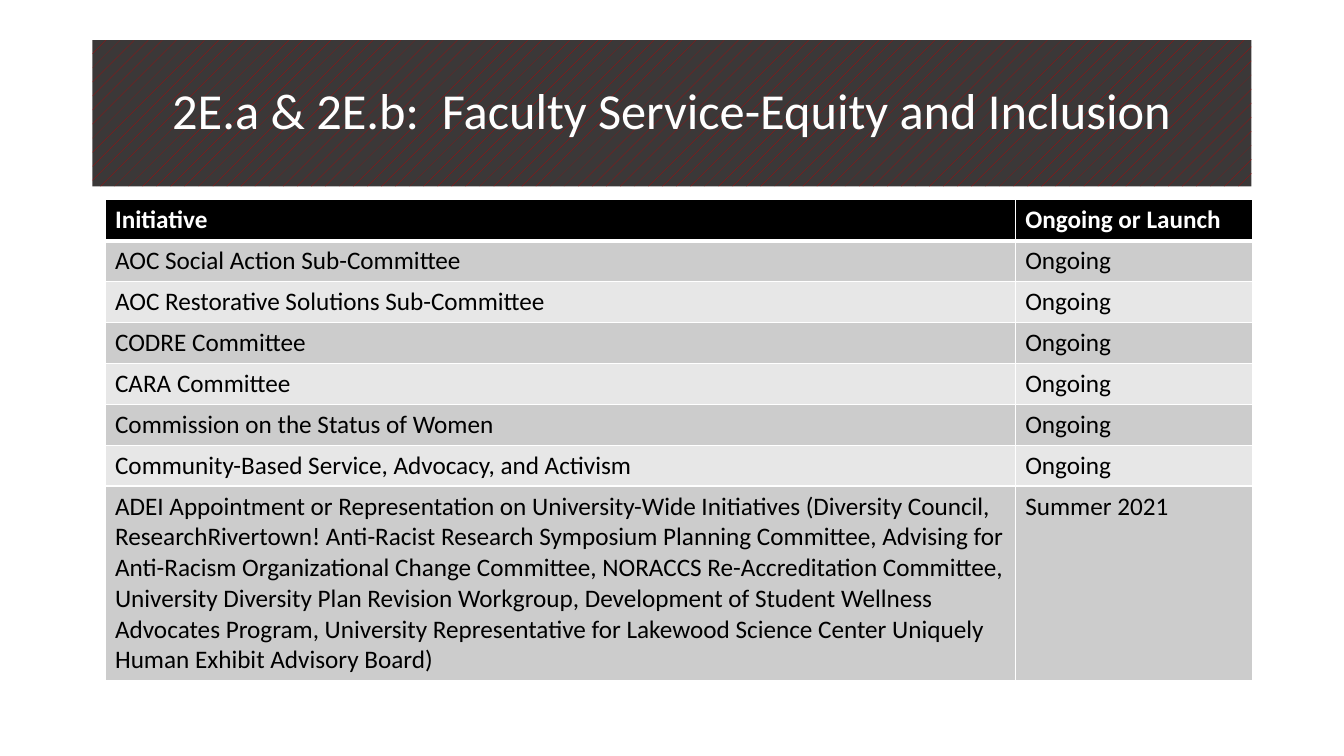
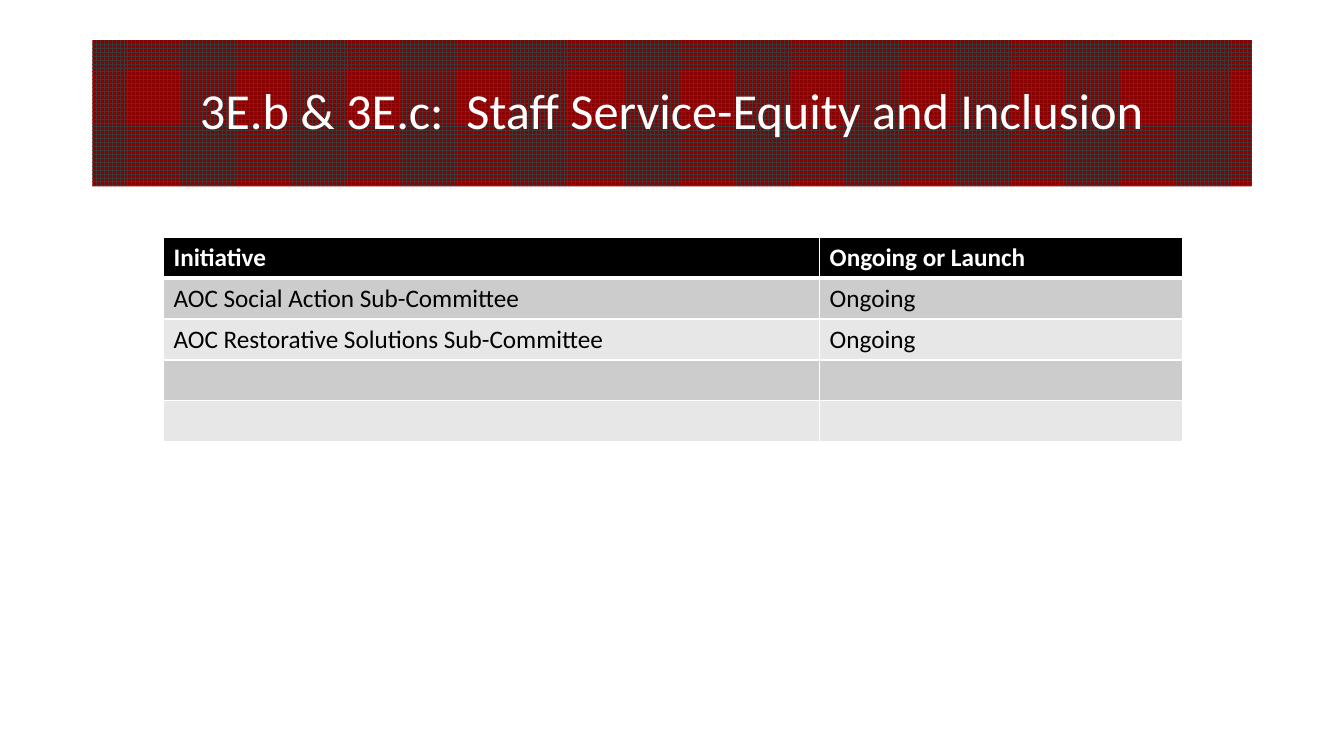
from lxml import etree
from pptx import Presentation
from pptx.dml.color import RGBColor
from pptx.enum.dml import MSO_PATTERN
from pptx.enum.shapes import MSO_SHAPE
from pptx.enum.text import MSO_ANCHOR, PP_ALIGN
from pptx.oxml.ns import qn
from pptx.util import Pt

RECT = MSO_SHAPE.RECTANGLE
DOTS = MSO_PATTERN.PERCENT_5
GRID = MSO_PATTERN.LARGE_GRID
MIDDLE = MSO_ANCHOR.MIDDLE
CENTER = PP_ALIGN.CENTER

FONT = "Calibri"
WHITE, BLACK = "FFFFFF", "000000"
RED, MAROON, SLATE = "C00000", "8A0000", "3B3838"
BANDS = ("CCCCCC", "E7E7E7")
ROW = 29.2
THIN, THICK = 1, 3
HEAD = ("Initiative", "Ongoing or Launch")
SHARED = [
    ("AOC Social Action Sub-Committee", "Ongoing"),
    ("AOC Restorative Solutions Sub-Committee", "Ongoing"),
]
FACULTY = SHARED + [
    ("CODRE Committee", "Ongoing"),
    ("CARA Committee", "Ongoing"),
    ("Commission on the Status of Women", "Ongoing"),
    ("Community-Based Service, Advocacy, and Activism", "Ongoing"),
    ("ADEI Appointment or Representation on University-Wide Initiatives "
     "(Diversity Council, ResearchRivertown! Anti-Racist Research Symposium "
     "Planning Committee, Advising for Anti-Racism Organizational Change "
     "Committee, NORACCS Re-Accreditation Committee, University Diversity "
     "Plan Revision Workgroup, Development of Student Wellness Advocates "
     "Program, University Representative for Lakewood Science Center "
     "Uniquely Human Exhibit Advisory Board)", "Summer 2021"),
]
STAFF = SHARED + [("", "")] * 2


def color(code):
    return RGBColor.from_string(code)


def add_run(para, text, size, tint, bold=False):
    run = para.add_run()
    run.text = text
    font = run.font
    font.name, font.size, font.bold = FONT, Pt(size), bold
    font.color.rgb = color(tint)


def add_title(slide, text, weave, fore, back):
    band = slide.shapes.add_shape(RECT, Pt(66), Pt(28.75), Pt(828), Pt(104.4))
    band.shadow.inherit = False
    band.line.fill.background()
    band.fill.patterned()
    band.fill.pattern = weave
    band.fill.fore_color.rgb = color(fore)
    band.fill.back_color.rgb = color(back)
    frame = band.text_frame
    frame.word_wrap = True
    frame.vertical_anchor = MIDDLE
    para = frame.paragraphs[0]
    para.alignment = CENTER
    para.line_spacing = 0.9
    add_run(para, text, 36, WHITE)


def add_edges(cell, top, bottom):
    """Draw white borders; must run before the cell gets its fill."""
    props = cell._tc.get_or_add_tcPr()
    for side, width in zip("LRTB", (THIN, THIN, top, bottom)):
        line = etree.SubElement(props, qn(f"a:ln{side}"), w=str(Pt(width)))
        fill = etree.SubElement(line, qn("a:solidFill"))
        etree.SubElement(fill, qn("a:srgbClr"), val=WHITE)


def add_grid(slide, left, top, widths, items):
    rows = [HEAD] + items
    table = slide.shapes.add_table(
        len(rows), len(widths), Pt(left), Pt(top),
        Pt(sum(widths)), Pt(ROW * len(rows))).table
    table.first_row = table.horz_banding = False
    for col, width in zip(table.columns, widths):
        col.width = Pt(width)
    for i, texts in enumerate(rows):
        head = i == 0
        table.rows[i].height = Pt(ROW)
        for j, text in enumerate(texts):
            cell = table.cell(i, j)
            add_edges(cell, THICK if i == 1 else THIN, THICK if head else THIN)
            cell.fill.solid()
            cell.fill.fore_color.rgb = color(BLACK if head else BANDS[(i - 1) % 2])
            if text:
                add_run(cell.text_frame.paragraphs[0], text, 18,
                        WHITE if head else BLACK, head)


def main():
    deck = Presentation()
    deck.slide_width, deck.slide_height = Pt(960), Pt(540)
    blank = deck.slide_layouts[6]

    slide = deck.slides.add_slide(blank)
    add_title(slide, "2E.a & 2E.b:  Faculty Service-Equity and Inclusion",
              DOTS, RED, SLATE)
    add_grid(slide, 75, 142.75, (650.2, 169.2), FACULTY)

    slide = deck.slides.add_slide(blank)
    add_title(slide, "3E.b & 3E.c:  Staff Service-Equity and Inclusion",
              GRID, SLATE, MAROON)
    add_grid(slide, 116.8, 169.5, (468.7, 259.2), STAFF)

    deck.save("out.pptx")


if __name__ == "__main__":
    main()
